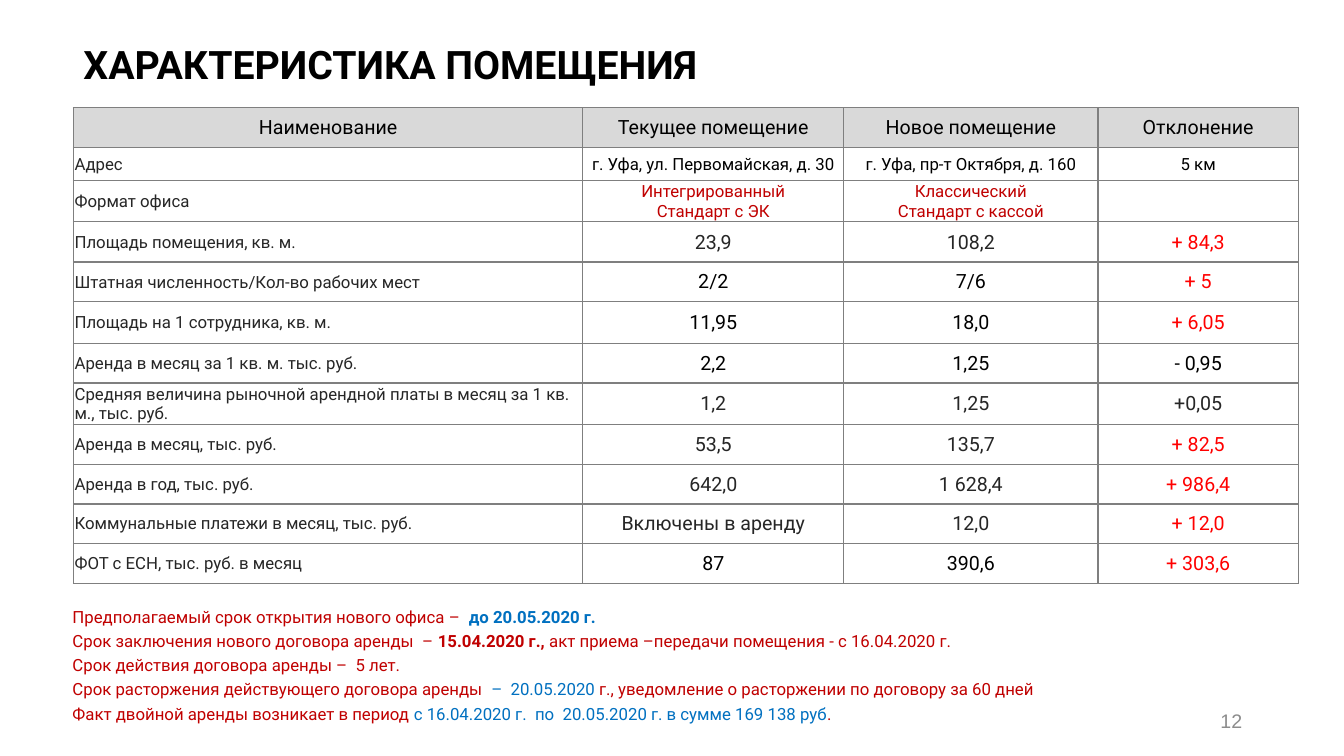
from lxml import etree
from pptx import Presentation
from pptx import util as u
from pptx.dml import color
from pptx.enum import text
from pptx.oxml import ns

COLORS = {
    "black": "000000", "dark": "262626", "grey": "8C8C8C", "head": "D9D9D9",
    "border": "7F7F7F", "maroon": "C00000", "red": "FF0000", "blue": "0070C0",
}
COLUMNS = [505, 259, 252, 199]
HEADER = ["Наименование", "Текущее помещение", "Новое помещение", "Отклонение"]
ROWS = [
    (33, 12, "black", ["Адрес", "г. Уфа, ул. Первомайская, д. 30", "г. Уфа, пр-т Октября, д. 160", "5 км"]),
    (41, 12, "maroon", ["Формат офиса", "Интегрированный\nСтандарт с ЭК", "Классический\nСтандарт с кассой", ""]),
    (40, 14, "dark", ["Площадь помещения, кв. м.", "23,9", "108,2", "+ 84,3"]),
    (39, 14, "black", ["Штатная численность/Кол-во рабочих мест", "2/2", "7/6", "+ 5"]),
    (42, 14, "black", ["Площадь на 1 сотрудника, кв. м.", "11,95", "18,0", "+ 6,05"]),
    (39, 14, "black", ["Аренда в месяц за 1 кв. м. тыс. руб.", "2,2", "1,25", "- 0,95"]),
    (40, 14, "dark", ["Средняя величина рыночной арендной платы в месяц за 1 кв. м., тыс. руб.", "1,2", "1,25", "+0,05"]),
    (40, 14, "dark", ["Аренда в месяц, тыс. руб.", "53,5", "135,7", "+ 82,5"]),
    (39, 14, "dark", ["Аренда в год, тыс. руб.", "642,0", "1 628,4", "+ 986,4"]),
    (39, 14, "dark", ["Коммунальные платежи в месяц, тыс. руб.", "Включены в аренду", "12,0", "+ 12,0"]),
    (40, 14, "black", ["ФОТ с ЕСН, тыс. руб. в месяц", "87", "390,6", "+ 303,6"]),
]
NOTES = [
    [("Предполагаемый срок открытия нового офиса –  ", "maroon", False), ("до 20.05.2020 г.", "blue", True)],
    [("Срок заключения нового договора аренды  – ", "maroon", False), ("15.04.2020 г., ", "maroon", True),
     ("акт приема –передачи помещения - с 16.04.2020 г.", "maroon", False)],
    [("Срок действия договора аренды –  5 лет.", "maroon", False)],
    [("Срок расторжения действующего договора аренды  ", "maroon", False), ("–  20.05.2020 ", "blue", False),
     ("г., уведомление о расторжении по договору за 60 дней", "maroon", False)],
    [("Факт двойной аренды возникает в период ", "maroon", False),
     ("с 16.04.2020 г.  по  20.05.2020 г. в сумме 169 138 руб", "blue", False), (".", "maroon", False)],
]


def px(n):
    return u.Emu(n * 9144)


def add_run(p, content, size=12, fill="black", bold=False, font="Roboto"):
    r = p.add_run()
    r.text = content
    r.font.name = font
    r.font.size = u.Pt(size)
    r.font.bold = bold
    r.font.color.rgb = color.RGBColor.from_string(COLORS[fill])


class Deck:
    def __init__(self, width, height):
        self.prs = Presentation()
        self.prs.slide_width, self.prs.slide_height = px(width), px(height)
        self.s = self.prs.slides.add_slide(self.prs.slide_layouts[6])

    def text(self, box, paragraphs, align=text.PP_ALIGN.LEFT, anchor=text.MSO_ANCHOR.TOP,
             spacing=None, after=0, **style):
        tf = self.s.shapes.add_textbox(*map(px, box)).text_frame
        tf.word_wrap = True
        tf.vertical_anchor = anchor
        for i, runs in enumerate(paragraphs):
            p = tf.add_paragraph() if i else tf.paragraphs[0]
            p.alignment = align
            p.line_spacing = spacing
            p.space_after = u.Pt(after)
            for content, fill, bold in runs:
                add_run(p, content, fill=fill, bold=bold, **style)

    def cell(self, cell, content, align, fill=None, **style):
        cell.margin_left = cell.margin_right = cell.margin_top = px(1)
        cell.margin_bottom = 0
        cell.vertical_anchor = text.MSO_ANCHOR.MIDDLE
        tf = cell.text_frame
        for i, line in enumerate(content.split("\n")):
            p = tf.add_paragraph() if i else tf.paragraphs[0]
            p.alignment = align
            if line:
                add_run(p, line, **style)
        self.border(cell)
        if fill:
            cell.fill.solid()
            cell.fill.fore_color.rgb = color.RGBColor.from_string(COLORS[fill])
        else:
            cell.fill.background()

    def border(self, cell):
        tc_pr = cell._tc.get_or_add_tcPr()
        for side in ("lnL", "lnR", "lnT", "lnB"):
            ln = etree.SubElement(tc_pr, ns.qn(f"a:{side}"), w=str(u.Pt(1)))
            solid = etree.SubElement(ln, ns.qn("a:solidFill"))
            etree.SubElement(solid, ns.qn("a:srgbClr"), val=COLORS["border"])

    def table(self, left, top, columns, header_height, header, rows):
        heights = [header_height] + [row[0] for row in rows]
        box = left, top, sum(columns), sum(heights)
        table = self.s.shapes.add_table(len(heights), len(columns), *map(px, box)).table
        table.first_row = table.horz_banding = False
        for column, width in zip(table.columns, columns):
            column.width = px(width)
        for row, height in zip(table.rows, heights):
            row.height = px(height)
        center = text.PP_ALIGN.CENTER
        for j, title in enumerate(header):
            self.cell(table.cell(0, j), title, center, fill="head", size=14)
        for i, (_, size, shade, values) in enumerate(rows, 1):
            label, *figures = values
            self.cell(table.cell(i, 0), label, text.PP_ALIGN.LEFT, **{"size": 12})
            table.cell(i, 0).text_frame.paragraphs[0].runs[0].font.color.rgb = color.RGBColor.from_string(COLORS["dark"])
            for j, value in enumerate(figures, 1):
                ink = "red" if value.startswith("+ ") else shade
                self.figure(table.cell(i, j), value, size, ink)

    def figure(self, cell, value, size, ink):
        self.cell(cell, value, text.PP_ALIGN.CENTER, size=size)
        for p in cell.text_frame.paragraphs:
            for r in p.runs:
                r.font.color.rgb = color.RGBColor.from_string(COLORS[ink])


def main():
    deck = Deck(1333, 750)
    deck.text((942, 695, 300, 40), [[("12", "grey", False)]], align=text.PP_ALIGN.RIGHT,
              anchor=text.MSO_ANCHOR.MIDDLE, size=14, font="Arial")
    deck.text((73, 35, 1013, 57), [[("ХАРАКТЕРИСТИКА ПОМЕЩЕНИЯ", "black", True)]], after=12, size=28)
    deck.table(73, 107, COLUMNS, 39, HEADER, ROWS)
    deck.text((62, 593, 1225, 131), NOTES, spacing=1.2, size=12)
    deck.prs.save("out.pptx")


if __name__ == "__main__":
    main()
